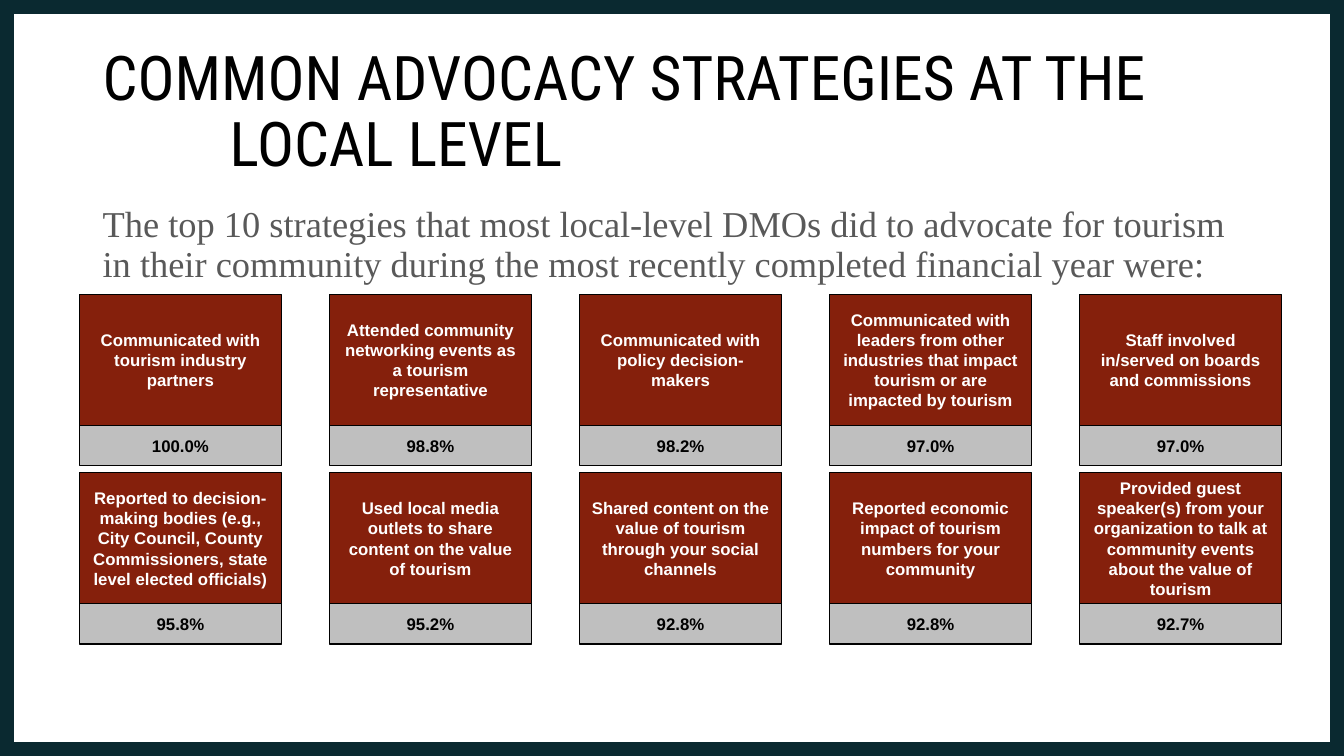
from dataclasses import dataclass

import pptx
import pptx.dml.color
import pptx.enum.shapes
import pptx.enum.text
import pptx.util

Inches = pptx.util.Inches
Pt = pptx.util.Pt
ALIGN = pptx.enum.text.PP_ALIGN
ANCHOR = pptx.enum.text.MSO_ANCHOR


@dataclass(frozen=True)
class Theme:
    frame: str = "0A2930"
    background: str = "FFFFFF"
    ink: str = "000000"
    muted: str = "595959"
    strategy: str = "85200C"
    share: str = "BFBFBF"
    light: str = "FFFFFF"
    title_font: str = "Roboto Condensed"
    intro_font: str = "Times New Roman"
    card_font: str = "Arial"
    title_size: float = 44
    intro_size: float = 26
    card_size: float = 12
    frame_width: float = 20.25
    card_line: float = 1


@dataclass(frozen=True)
class Strategy:
    label: str
    share: str


THEME = Theme()
COLUMNS = 5
GRID_LEFT, GRID_TOP = 0.79, 2.92
COLUMN_STEP, ROW_STEP = 2.48, 1.77
CARD_WIDTH, LABEL_HEIGHT, SHARE_HEIGHT = 2, 1.3, 0.4

STRATEGIES = [
    Strategy("Communicated with tourism industry partners", "100.0%"),
    Strategy("Attended community networking events as a tourism representative", "98.8%"),
    Strategy("Communicated with policy decision-makers", "98.2%"),
    Strategy("Communicated with leaders from other industries that impact tourism "
             "or are impacted by tourism", "97.0%"),
    Strategy("Staff involved in/served on boards and commissions", "97.0%"),
    Strategy("Reported to decision-making bodies (e.g., City Council, County "
             "Commissioners, state level elected officials)", "95.8%"),
    Strategy("Used local media outlets to share content on the value of tourism", "95.2%"),
    Strategy("Shared content on the value of tourism through your social channels", "92.8%"),
    Strategy("Reported economic impact of tourism numbers for your community", "92.8%"),
    Strategy("Provided guest speaker(s) from your organization to talk at community "
             "events about the value of tourism", "92.7%"),
]


def rgb(value: str) -> pptx.dml.color.RGBColor:
    return pptx.dml.color.RGBColor.from_string(value)


def write(shape, text: str, *, font: str, size: float, color: str, bold: bool = False,
          align=ALIGN.LEFT, anchor=ANCHOR.TOP, line_spacing: float = 1.0,
          hanging: float = 0) -> None:
    """Put one formatted paragraph in a shape; hanging indents its later lines."""
    frame = shape.text_frame
    frame.word_wrap = True
    frame.vertical_anchor = anchor
    paragraph = frame.paragraphs[0]
    paragraph.alignment = align
    paragraph.line_spacing = line_spacing
    if hanging:
        properties = paragraph._p.get_or_add_pPr()
        properties.set("marL", str(Inches(hanging)))
        properties.set("indent", str(-Inches(hanging)))
    run = paragraph.add_run()
    run.text = text
    run.font.name = font
    run.font.size = Pt(size)
    run.font.bold = bold
    run.font.color.rgb = rgb(color)


def add_box(slide, left: float, top: float, width: float, height: float, *,
            line: str, line_width: float, fill: str | None = None):
    box = slide.shapes.add_shape(
        pptx.enum.shapes.MSO_SHAPE.RECTANGLE,
        Inches(left), Inches(top), Inches(width), Inches(height))
    box.shadow.inherit = False
    if fill is None:
        box.fill.background()
    else:
        box.fill.solid()
        box.fill.fore_color.rgb = rgb(fill)
    box.line.color.rgb = rgb(line)
    box.line.width = Pt(line_width)
    return box


def add_card(slide, strategy: Strategy, left: float, top: float) -> None:
    """Draw a strategy label with its share underneath."""
    parts = [
        (strategy.label, top, LABEL_HEIGHT, THEME.strategy, THEME.light),
        (strategy.share, top + LABEL_HEIGHT, SHARE_HEIGHT, THEME.share, THEME.ink),
    ]
    for text, part_top, height, fill, color in parts:
        box = add_box(slide, left, part_top, CARD_WIDTH, height, fill=fill,
                      line=THEME.ink, line_width=THEME.card_line)
        write(box, text, font=THEME.card_font, size=THEME.card_size, color=color,
              bold=True, align=ALIGN.CENTER, anchor=ANCHOR.MIDDLE)


def main() -> None:
    deck = pptx.Presentation()
    deck.slide_width, deck.slide_height = Inches(13.33), Inches(7.5)
    slide = deck.slides.add_slide(deck.slide_layouts[6])
    slide.background.fill.solid()
    slide.background.fill.fore_color.rgb = rgb(THEME.background)

    # Frame around the slide
    add_box(slide, 0, 0, 13.33, 7.5, line=THEME.frame, line_width=THEME.frame_width)

    # Title and introduction
    title = slide.shapes.add_textbox(Inches(0.92), Inches(0.4), Inches(11.5), Inches(1.45))
    write(title, "COMMON ADVOCACY STRATEGIES AT THE LOCAL LEVEL",
          font=THEME.title_font, size=THEME.title_size, color=THEME.ink,
          anchor=ANCHOR.MIDDLE, line_spacing=0.9, hanging=1.26)
    intro = slide.shapes.add_textbox(Inches(0.92), Inches(2), Inches(11.5), Inches(4.37))
    write(intro, "The top 10 strategies that most local-level DMOs did to advocate for "
                 "tourism in their community during the most recently completed "
                 "financial year were:",
          font=THEME.intro_font, size=THEME.intro_size, color=THEME.muted,
          line_spacing=0.9)

    # Grid of strategies
    for index, strategy in enumerate(STRATEGIES):
        row, column = divmod(index, COLUMNS)
        add_card(slide, strategy, GRID_LEFT + column * COLUMN_STEP,
                 GRID_TOP + row * ROW_STEP)

    deck.save("out.pptx")


if __name__ == "__main__":
    main()
